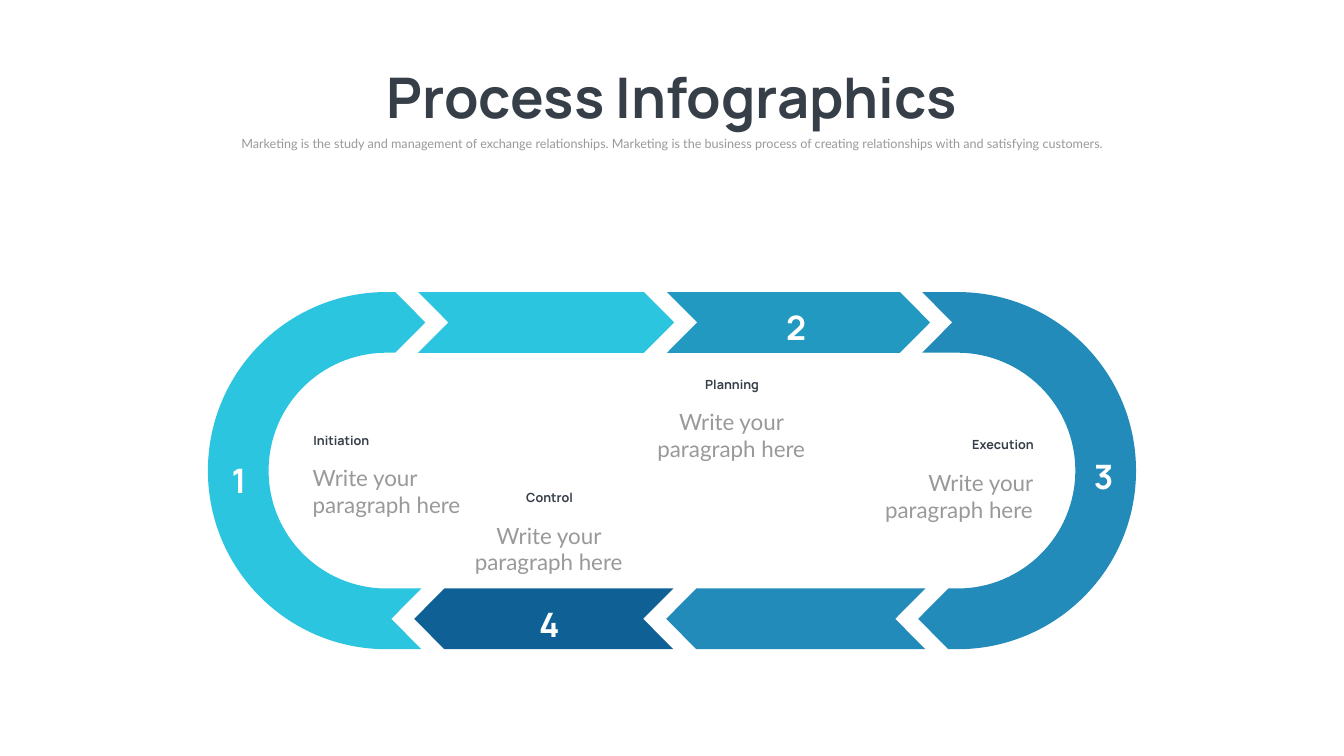
from dataclasses import dataclass

from lxml import etree
from pptx import Presentation
from pptx import util as u
from pptx.dml.color import RGBColor
from pptx.enum import text
from pptx.oxml import ns

WHITE = RGBColor(0xFF, 0xFF, 0xFF)
DARK = RGBColor(0x36, 0x3E, 0x48)
GREY = RGBColor(0x99, 0x99, 0x99)
CYAN = RGBColor(0x2B, 0xC5, 0xE0)
TEAL = RGBColor(0x22, 0x99, 0xC0)
BLUE = RGBColor(0x22, 0x8B, 0xB9)
NAVY = RGBColor(0x0F, 0x61, 0x95)

HEADING_FONT = "Manrope"
BODY_FONT = "Lato"
LEFT, CENTER, RIGHT = (
    text.PP_ALIGN.LEFT, text.PP_ALIGN.CENTER, text.PP_ALIGN.RIGHT)

# Track geometry in centimetres
MID_Y = 11.86
OUTER_R = 4.5
INNER_R = 2.97
BAND = OUTER_R - INNER_R
NOTCH = 0.76
TOP_Y = MID_Y - OUTER_R
BOTTOM_Y = MID_Y + INNER_R
KAPPA = 0.5523  # Bezier handle length of a quarter circle

Point = tuple[float, float]


@dataclass(frozen=True)
class Style:
    font: str
    size: float
    color: RGBColor
    bold: bool = False


@dataclass(frozen=True)
class Arrow:
    """A straight band whose tail and tip set its direction."""
    tail: float
    tip: float
    top: float
    color: RGBColor


@dataclass(frozen=True)
class Number:
    label: str
    left: float
    top: float


@dataclass(frozen=True)
class Step:
    name: str
    left: float
    top: float
    align: text.PP_ALIGN


TITLE = Style(HEADING_FONT, 40, DARK, True)
SUBTITLE = Style(BODY_FONT, 9, GREY)
NUMBER = Style(HEADING_FONT, 24, WHITE, True)
STEP_NAME = Style(HEADING_FONT, 9, DARK, True)
STEP_BODY = Style(BODY_FONT, 16, GREY)

ARROWS = [
    Arrow(10.54, 16.99, TOP_Y, CYAN),
    Arrow(16.81, 23.44, TOP_Y, TEAL),
    Arrow(23.32, 16.79, BOTTOM_Y, BLUE),
    Arrow(16.97, 10.44, BOTTOM_Y, NAVY),
]
NUMBERS = [
    Number("1", 4.83, 11.46),
    Number("2", 18.87, 7.62),
    Number("3", 26.62, 11.37),
    Number("4", 12.65, 15.09),
]
STEPS = [
    Step("Planning", 16.29, 9.37, CENTER),
    Step("Initiation", 7.63, 10.78, LEFT),
    Step("Execution", 22.0, 10.89, RIGHT),
    Step("Control", 11.69, 12.22, CENTER),
]


def add_text(shapes, words: str, style: Style, left: float, top: float,
             width: float, height: float, align: text.PP_ALIGN = CENTER) -> None:
    box = shapes.add_textbox(u.Cm(left), u.Cm(top), u.Cm(width), u.Cm(height))
    tf = box.text_frame
    tf.word_wrap = True
    tf.auto_size = text.MSO_AUTO_SIZE.SHAPE_TO_FIT_TEXT
    p = tf.paragraphs[0]
    p.alignment = align
    r = p.add_run()
    r.text = words
    r.font.name = style.font
    r.font.size = u.Pt(style.size)
    r.font.bold = style.bold
    r.font.color.rgb = style.color


def add_outline(shapes, points: list[Point], color: RGBColor):
    start, *rest = [(u.Cm(x), u.Cm(y)) for x, y in points]
    builder = shapes.build_freeform(*start, scale=1.0)
    builder.add_line_segments(rest, close=True)
    sp = builder.convert_to_shape()
    sp.shadow.inherit = False
    sp.fill.solid()
    sp.fill.fore_color.rgb = color
    sp.line.fill.background()
    return sp


def round_corners(sp, points: list[Point], corners: dict[int, Point]) -> None:
    """Turn the line that ends at each given point into a quarter circle."""
    lines = list(sp._element.iter(ns.qn("a:lnTo")))
    for end, corner in corners.items():
        line = lines[end - 1]
        line.tag = ns.qn("a:cubicBezTo")
        for i, anchor in enumerate((points[end - 1], points[end])):
            x, y = (a + KAPPA * (c - a) for a, c in zip(anchor, corner))
            handle = etree.Element(ns.qn("a:pt"))
            handle.set("x", str(u.Cm(x) - sp.left))
            handle.set("y", str(u.Cm(y) - sp.top))
            line.insert(i, handle)


def add_arrow(shapes, arrow: Arrow) -> None:
    notch = NOTCH if arrow.tip > arrow.tail else -NOTCH
    shoulder = arrow.tip - notch
    middle, bottom = arrow.top + BAND / 2, arrow.top + BAND
    add_outline(shapes, [
        (arrow.tail, arrow.top), (shoulder, arrow.top), (arrow.tip, middle),
        (shoulder, bottom), (arrow.tail, bottom), (arrow.tail + notch, middle),
    ], arrow.color)


def add_bend(shapes, center_x: float, side: int, top_x: float,
             bottom_x: float, color: RGBColor) -> None:
    """Draw a curved end; side is -1 for left and 1 for right."""
    outer_x, inner_x = center_x + side * OUTER_R, center_x + side * INNER_R
    inner_top, bottom = TOP_Y + BAND, BOTTOM_Y + BAND
    points = [
        (top_x, TOP_Y), (center_x, TOP_Y), (outer_x, MID_Y),
        (center_x, bottom), (bottom_x, bottom),
        (bottom_x - NOTCH, BOTTOM_Y + BAND / 2), (bottom_x, BOTTOM_Y),
        (center_x, BOTTOM_Y), (inner_x, MID_Y), (center_x, inner_top),
        (top_x, inner_top), (top_x + NOTCH, TOP_Y + BAND / 2),
    ]
    sp = add_outline(shapes, points, color)
    round_corners(sp, points, {
        2: (outer_x, TOP_Y), 3: (outer_x, bottom),
        8: (inner_x, BOTTOM_Y), 9: (inner_x, inner_top),
    })


def add_step(shapes, step: Step) -> None:
    group = shapes.add_group_shape().shapes
    add_text(group, step.name, STEP_NAME,
             step.left + 0.02, step.top, 4.28, 0.89, step.align)
    add_text(group, "Write your paragraph here", STEP_BODY,
             step.left, step.top + 0.8, 4.28, 1.5, step.align)


def main() -> None:
    prs = Presentation()
    prs.slide_width, prs.slide_height = u.Cm(33.87), u.Cm(19.05)
    s = prs.slides.add_slide(prs.slide_layouts[6])
    shapes = s.shapes

    add_text(shapes, "Process Infographics", TITLE, 9.11, 1.45, 15.65, 3.68)
    add_text(shapes,
             "Marketing is the study and management of exchange relationships. "
             "Marketing is the business process of creating relationships "
             "with and satisfying customers.",
             SUBTITLE, 3.71, 3.3, 26.44, 0.64)

    for arrow in ARROWS:
        add_arrow(shapes, arrow)
    add_bend(shapes, 9.74, -1, 9.96, 10.62, CYAN)
    add_bend(shapes, 24.13, 1, 23.24, 23.9, BLUE)
    for number in NUMBERS:
        add_text(shapes, number.label, NUMBER,
                 number.left, number.top, 2.39, 1.27)
    for step in STEPS:
        add_step(shapes, step)

    prs.save("out.pptx")


if __name__ == "__main__":
    main()
